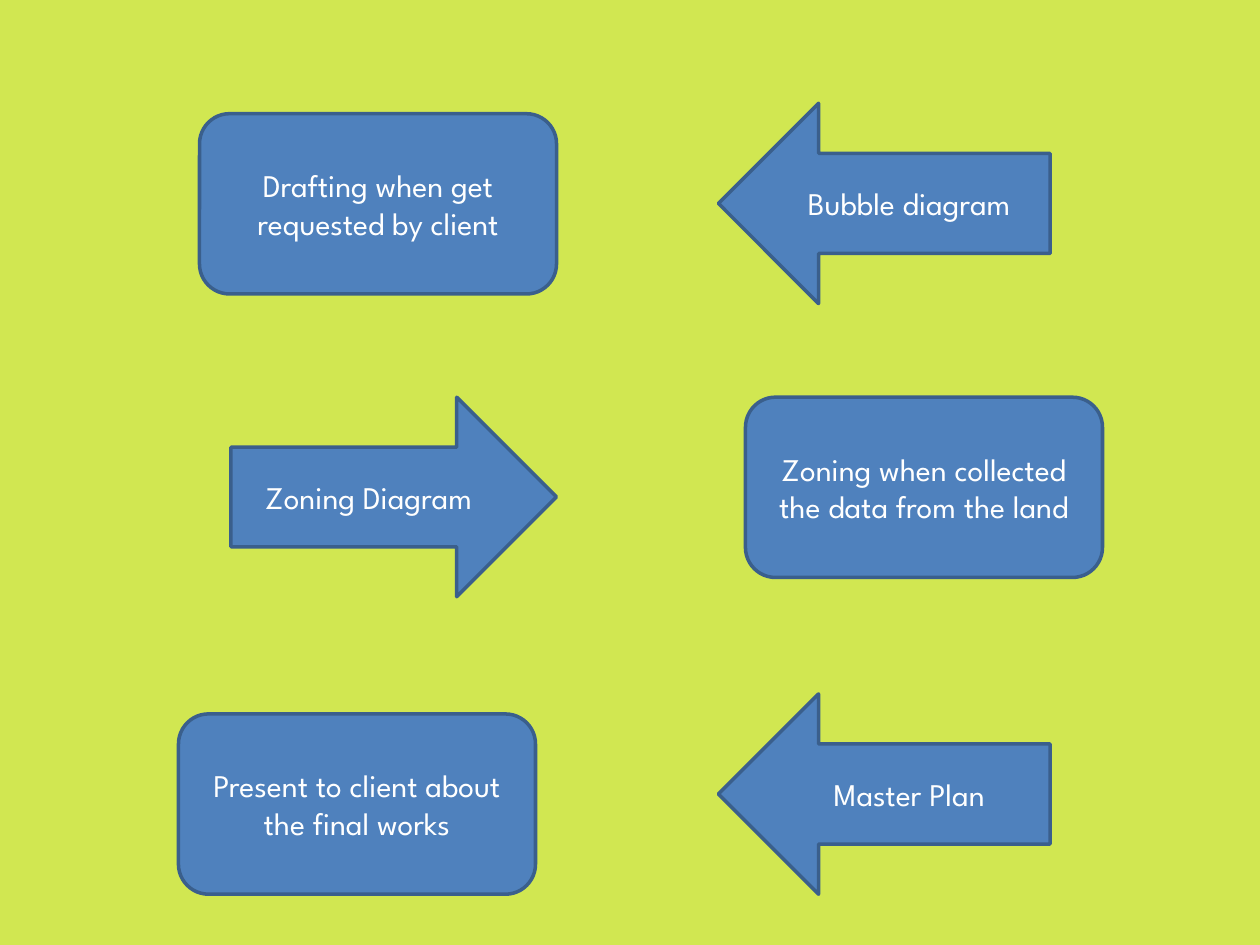
from pptx import Presentation
from pptx.dml.color import RGBColor
from pptx.enum.shapes import MSO_SHAPE
from pptx.enum.text import MSO_ANCHOR, PP_ALIGN
from pptx.util import Pt

COLORS = {"background": "D1E751", "fill": "4F81BD", "outline": "3A5F8C", "text": "FFFFFF"}
FONT = "League Spartan"
BOX_SIZE = (204, 103)
LEFT_ARROW_SIZE = (189.5, 114.5)
RIGHT_ARROW_SIZE = (186, 114)

STEPS = [
    (MSO_SHAPE.ROUNDED_RECTANGLE, 114, 65, BOX_SIZE, "Drafting when get requested by client"),
    (MSO_SHAPE.ROUNDED_RECTANGLE, 426, 227, BOX_SIZE, "Zoning when collected the data from the land"),
    (MSO_SHAPE.ROUNDED_RECTANGLE, 102, 408, BOX_SIZE, "Present to client about the final works"),
    (MSO_SHAPE.LEFT_ARROW, 410.5, 59, LEFT_ARROW_SIZE, "Bubble diagram"),
    (MSO_SHAPE.LEFT_ARROW, 410.5, 396.5, LEFT_ARROW_SIZE, "Master Plan"),
    (MSO_SHAPE.RIGHT_ARROW, 132, 227, RIGHT_ARROW_SIZE, "Zoning Diagram"),
]

deck = Presentation()
deck.slide_width, deck.slide_height = Pt(720), Pt(540)
page = deck.slides.add_slide(deck.slide_layouts[6])
page.background.fill.solid()
page.background.fill.fore_color.rgb = RGBColor.from_string(COLORS["background"])

for kind, left, top, (width, height), text in STEPS:
    step = page.shapes.add_shape(kind, Pt(left), Pt(top), Pt(width), Pt(height))
    step.shadow.inherit = False
    step.fill.solid()
    step.fill.fore_color.rgb = RGBColor.from_string(COLORS["fill"])
    step.line.color.rgb = RGBColor.from_string(COLORS["outline"])
    step.line.width = Pt(2)
    frame = step.text_frame
    frame.word_wrap = True
    frame.vertical_anchor = MSO_ANCHOR.MIDDLE
    para = frame.paragraphs[0]
    para.text = text
    para.alignment = PP_ALIGN.CENTER
    para.font.name = FONT
    para.font.size = Pt(18)
    para.font.color.rgb = RGBColor.from_string(COLORS["text"])

deck.save("out.pptx")
